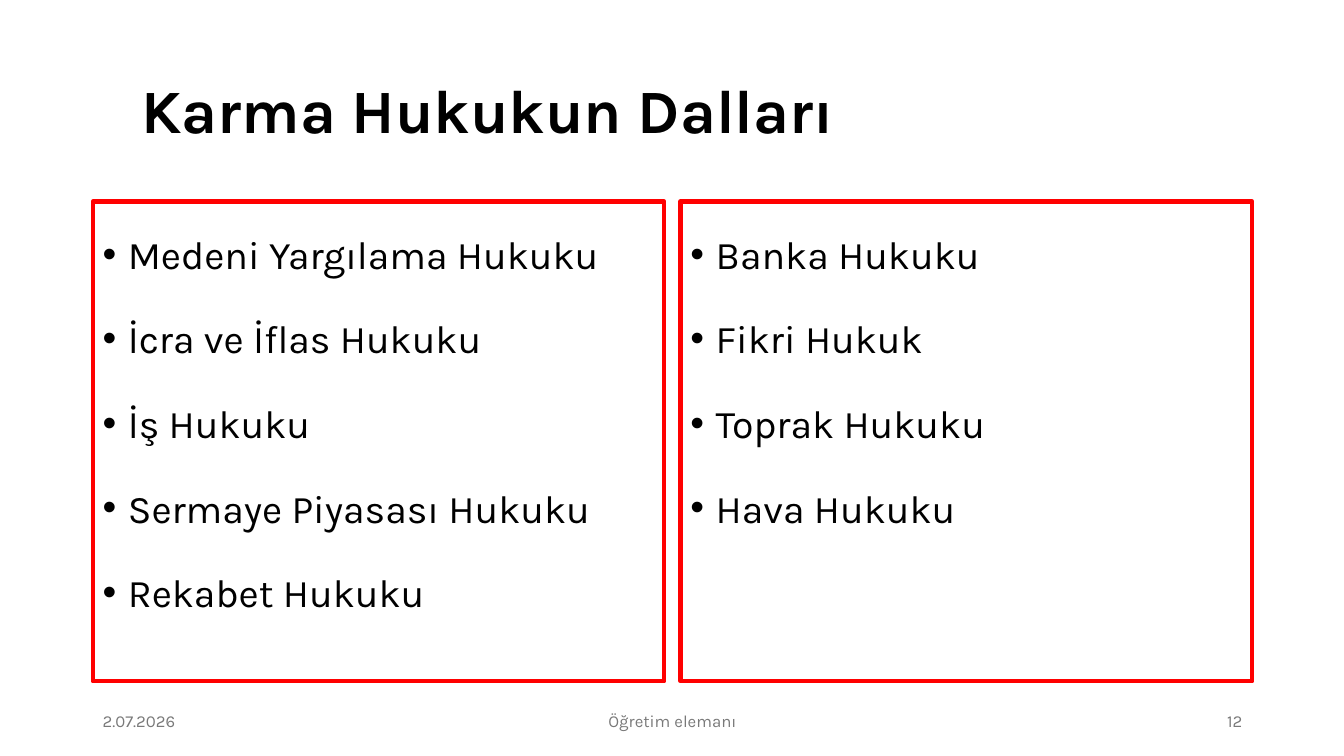
import dataclasses

import lxml.etree
import pptx
import pptx.dml.color
import pptx.enum.shapes
import pptx.enum.text
import pptx.oxml.ns
import pptx.util

EMU_PER_PX = 9144
FONT_NAME = "Karla"
BLACK = "000000"
RED = "FF0000"
GRAY = "797979"
ALIGN = pptx.enum.text.PP_ALIGN
ANCHOR = pptx.enum.text.MSO_ANCHOR


@dataclasses.dataclass(frozen=True)
class Panel:
    left: int
    branches: tuple[str, ...]


@dataclasses.dataclass(frozen=True)
class FooterField:
    left: int
    width: int
    text: str
    alignment: ALIGN


PANELS = (
    Panel(92, (
        "Medeni Yargılama Hukuku",
        "İcra ve İflas Hukuku",
        "İş Hukuku",
        "Sermaye Piyasası Hukuku",
        "Rekabet Hukuku",
    )),
    Panel(675, ("Banka Hukuku", "Fikri Hukuk", "Toprak Hukuku", "Hava Hukuku")),
)
FOOTER = (
    FooterField(92, 300, "2.07.2026", ALIGN.LEFT),
    FooterField(442, 450, "Öğretim elemanı", ALIGN.CENTER),
    FooterField(942, 300, "12", ALIGN.RIGHT),
)


def px(length: int) -> pptx.util.Emu:
    return pptx.util.Emu(length * EMU_PER_PX)


def color(value: str) -> pptx.dml.color.RGBColor:
    return pptx.dml.color.RGBColor.from_string(value)


def add_run(paragraph, text: str, size: int, fill: str, bold: bool = False) -> None:
    run = paragraph.add_run()
    run.text = text
    run.font.name = FONT_NAME
    run.font.size = pptx.util.Pt(size)
    run.font.bold = bold
    run.font.color.rgb = color(fill)


def add_bullet(paragraph) -> None:
    properties = paragraph._p.get_or_add_pPr()
    properties.set("marL", str(px(25)))
    properties.set("indent", str(px(-25)))
    for tag, name, value in (("a:buFont", "typeface", "Arial"), ("a:buChar", "char", "•")):
        element = lxml.etree.SubElement(properties, pptx.oxml.ns.qn(tag))
        element.set(name, value)


def fill_title(title) -> None:
    title.left, title.top, title.width, title.height = px(130), px(40), px(1112), px(145)
    frame = title.text_frame
    frame.word_wrap = True
    frame.auto_size = pptx.enum.text.MSO_AUTO_SIZE.NONE
    frame.vertical_anchor = ANCHOR.MIDDLE
    paragraph = frame.paragraphs[0]
    paragraph.alignment = ALIGN.LEFT
    paragraph.line_spacing = 0.9
    add_run(paragraph, "Karma Hukukun Dalları", 44, BLACK, bold=True)


def draw_panel(slide, panel: Panel) -> None:
    shape = slide.shapes.add_shape(
        pptx.enum.shapes.MSO_SHAPE.RECTANGLE, px(panel.left), px(200), px(567), px(476)
    )
    shape.shadow.inherit = False
    shape.fill.background()
    shape.line.color.rgb = color(RED)
    shape.line.width = pptx.util.Pt(3)
    frame = shape.text_frame
    frame.word_wrap = True
    frame.vertical_anchor = ANCHOR.TOP
    for index, branch in enumerate(panel.branches):
        paragraph = frame.add_paragraph() if index else frame.paragraphs[0]
        add_bullet(paragraph)
        paragraph.alignment = ALIGN.JUSTIFY
        paragraph.line_spacing = 1.5
        paragraph.space_before = pptx.util.Pt(10 if index else 0)
        add_run(paragraph, branch, 28, BLACK)


def draw_footer_field(slide, field: FooterField) -> None:
    box = slide.shapes.add_textbox(px(field.left), px(695), px(field.width), px(40))
    frame = box.text_frame
    frame.word_wrap = True
    frame.vertical_anchor = ANCHOR.MIDDLE
    paragraph = frame.paragraphs[0]
    paragraph.alignment = field.alignment
    add_run(paragraph, field.text, 12, GRAY)


def main() -> None:
    presentation = pptx.Presentation()
    presentation.slide_width, presentation.slide_height = px(1333), px(750)
    slide = presentation.slides.add_slide(presentation.slide_layouts.get_by_name("Title Only"))
    fill_title(slide.shapes.title)
    for panel in PANELS:
        draw_panel(slide, panel)
    for field in FOOTER:
        draw_footer_field(slide, field)
    presentation.save("out.pptx")


if __name__ == "__main__":
    main()
